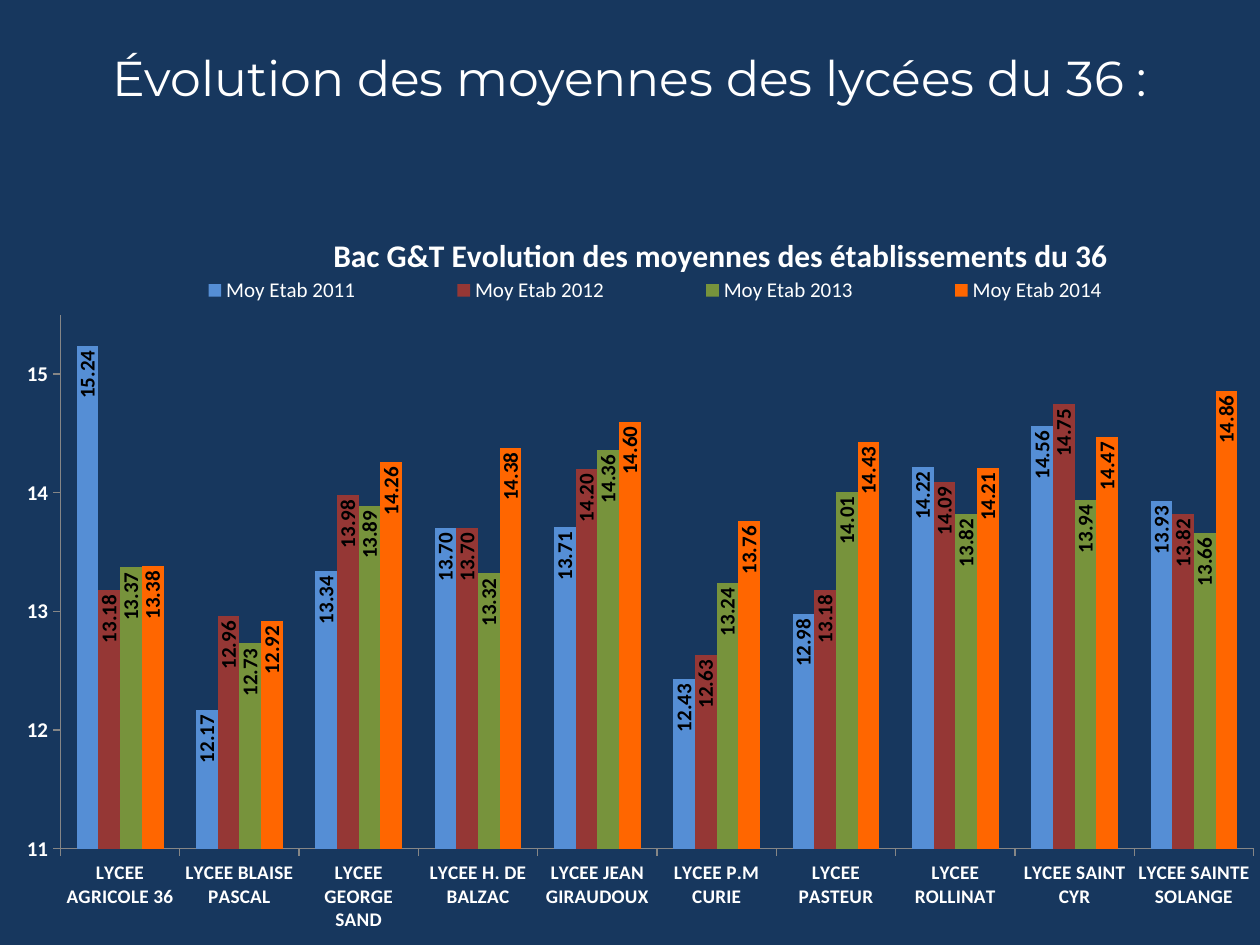
from dataclasses import dataclass

from lxml.etree import SubElement
from pptx import Presentation
from pptx.chart.data import CategoryChartData
from pptx.dml.color import RGBColor
from pptx.enum.chart import XL_CHART_TYPE, XL_LABEL_POSITION, XL_LEGEND_POSITION, XL_TICK_MARK
from pptx.enum.text import MSO_ANCHOR, PP_ALIGN
from pptx.oxml.ns import qn
from pptx.util import Cm, Pt


@dataclass(frozen=True)
class Theme:
    background: str = "17375E"
    light: str = "FFFFFF"
    dark: str = "000000"
    axis: str = "868686"
    years: tuple = ("558ED5", "953735", "77933C", "FF6600")
    heading_font: str = "Montserrat"
    chart_font: str = "Calibri"
    heading_size: int = 28
    chart_title_size: int = 18
    text_size: int = 12
    category_size: int = 11


THEME = Theme()

SCHOOLS = (
    "LYCEE AGRICOLE 36", "LYCEE BLAISE PASCAL", "LYCEE GEORGE SAND",
    "LYCEE H. DE BALZAC", "LYCEE JEAN GIRAUDOUX", "LYCEE P.M CURIE",
    "LYCEE PASTEUR", "LYCEE ROLLINAT", "LYCEE SAINT CYR", "LYCEE SAINTE SOLANGE",
)
AVERAGES = {
    2011: (15.24, 12.17, 13.34, 13.7, 13.71, 12.43, 12.98, 14.22, 14.56, 13.93),
    2012: (13.18, 12.96, 13.98, 13.7, 14.2, 12.63, 13.18, 14.09, 14.75, 13.82),
    2013: (13.37, 12.73, 13.89, 13.32, 14.36, 13.24, 14.01, 13.82, 13.94, 13.66),
    2014: (13.38, 12.92, 14.26, 14.38, 14.6, 13.76, 14.43, 14.21, 14.47, 14.86),
}


def style_font(font, name, size, color, bold=False):
    font.name = name
    font.size = Pt(size)
    font.bold = bold
    font.color.rgb = RGBColor.from_string(color)


def fill_solid(fill, color):
    fill.solid()
    fill.fore_color.rgb = RGBColor.from_string(color)


def place_part(parent, index, **settings):
    for old in parent.findall(qn("c:layout")):
        parent.remove(old)
    layout = SubElement(parent, qn("c:layout"))
    manual = SubElement(layout, qn("c:manualLayout"))
    for key, value in settings.items():
        SubElement(manual, qn(f"c:{key}")).set("val", str(value))
    parent.insert(index, layout)


def add_heading(page, left, top, width, height):
    box = page.shapes.add_textbox(left, top, width, height)
    frame = box.text_frame
    frame.word_wrap = True
    frame.vertical_anchor = MSO_ANCHOR.MIDDLE
    para = frame.paragraphs[0]
    para.text = "Évolution des moyennes des lycées du 36 :"
    para.alignment = PP_ALIGN.CENTER
    style_font(para.font, THEME.heading_font, THEME.heading_size, THEME.light)


def style_axis(axis, size):
    axis.has_major_gridlines = False
    axis.major_tick_mark = XL_TICK_MARK.OUTSIDE
    axis.minor_tick_mark = XL_TICK_MARK.NONE
    axis.format.line.color.rgb = RGBColor.from_string(THEME.axis)
    axis.format.line.width = Pt(0.75)
    style_font(axis.tick_labels.font, THEME.chart_font, size, THEME.light, True)


def style_series(series, color):
    fill_solid(series.format.fill, color)
    series.invert_if_negative = False
    labels = series.data_labels
    labels.show_value = True
    labels.position = XL_LABEL_POSITION.INSIDE_END
    labels.number_format = "0.00"
    labels.number_format_is_linked = False
    style_font(labels.font, THEME.chart_font, THEME.text_size, THEME.dark, True)
    body = labels._element.find(qn("c:txPr")).find(qn("a:bodyPr"))
    body.set("rot", "-5400000")
    body.set("vert", "horz")


def add_averages_chart(page, left, top, width, height):
    data = CategoryChartData()
    data.categories = SCHOOLS
    for year, values in AVERAGES.items():
        data.add_series(f"Moy Etab {year}", values)
    chart = page.shapes.add_chart(
        XL_CHART_TYPE.COLUMN_CLUSTERED, left, top, width, height, data
    ).chart
    style_font(chart.font, THEME.chart_font, 10, THEME.dark)

    chart.has_title = True
    para = chart.chart_title.text_frame.paragraphs[0]
    para.text = "Bac G&T Evolution des moyennes des établissements du 36"
    style_font(para.font, THEME.chart_font, THEME.chart_title_size, THEME.light, True)
    place_part(chart.chart_title._element, 1, xMode="edge", yMode="edge", x=0.26, y=0.03)

    chart.has_legend = True
    legend = chart.legend
    legend.position = XL_LEGEND_POSITION.TOP
    legend.include_in_layout = False
    style_font(legend.font, THEME.chart_font, THEME.text_size, THEME.light)
    place_part(legend._element, 1, xMode="edge", yMode="edge", x=0.09, y=0.09, w=0.86, h=0.05)

    style_axis(chart.category_axis, THEME.category_size)
    scale = chart.value_axis
    style_axis(scale, THEME.text_size)
    scale.minimum_scale = 11
    scale.maximum_scale = 15.5
    scale.major_unit = 1
    scale.tick_labels.number_format = "0"
    scale.tick_labels.number_format_is_linked = False

    plot = chart.plots[0]
    plot.gap_width = 150
    plot.overlap = 0
    plot.vary_by_categories = False
    for series, color in zip(plot.series, THEME.years):
        style_series(series, color)
    place_part(plot._element.getparent(), 0, layoutTarget="inner", xMode="edge",
               yMode="edge", x=0.048, y=0.148, w=0.947, h=0.722)


def main():
    deck = Presentation()
    deck.slide_width = Cm(25.4)
    deck.slide_height = Cm(19.05)
    page = deck.slides.add_slide(deck.slide_layouts[6])
    fill_solid(page.background.fill, THEME.background)
    add_heading(page, Cm(0.33), Cm(0.53), Cm(24.74), Cm(2.06))
    chart_top = Cm(4.14)
    add_averages_chart(page, 0, chart_top, deck.slide_width, deck.slide_height - chart_top)
    deck.save("out.pptx")


if __name__ == "__main__":
    main()
